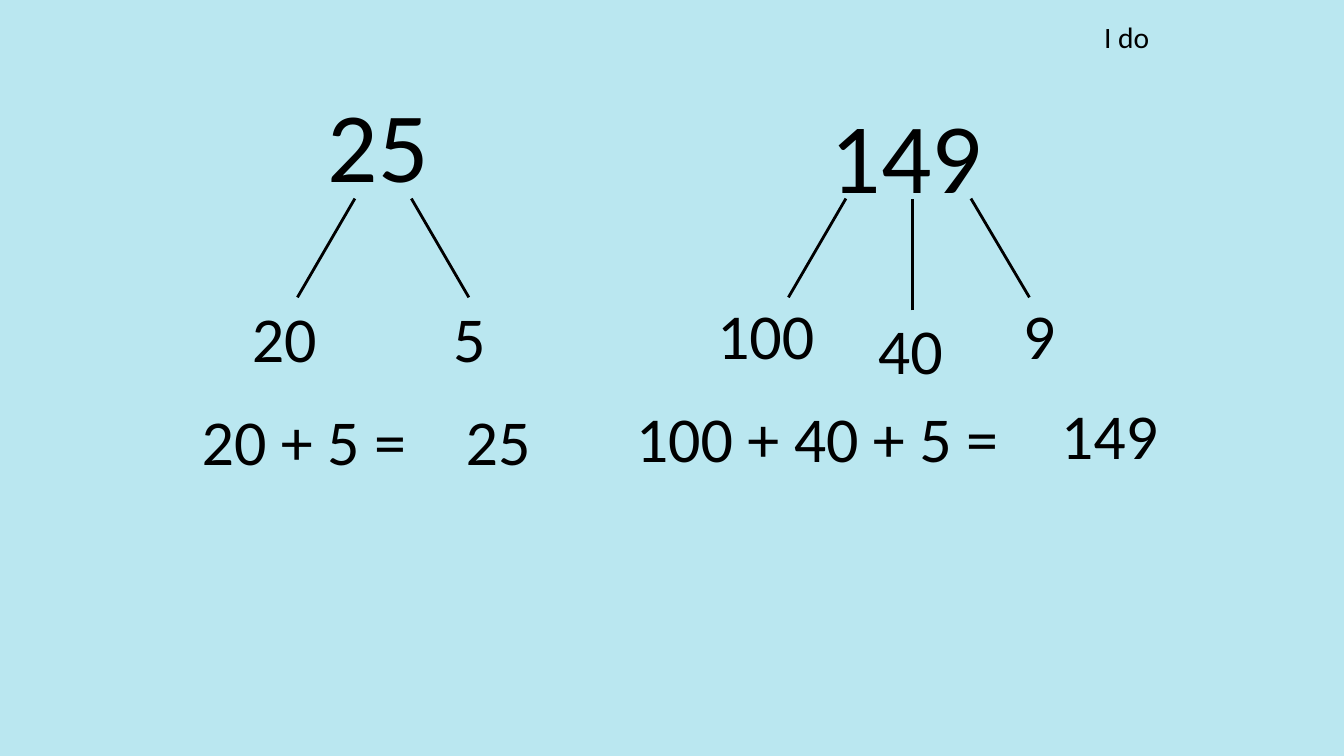
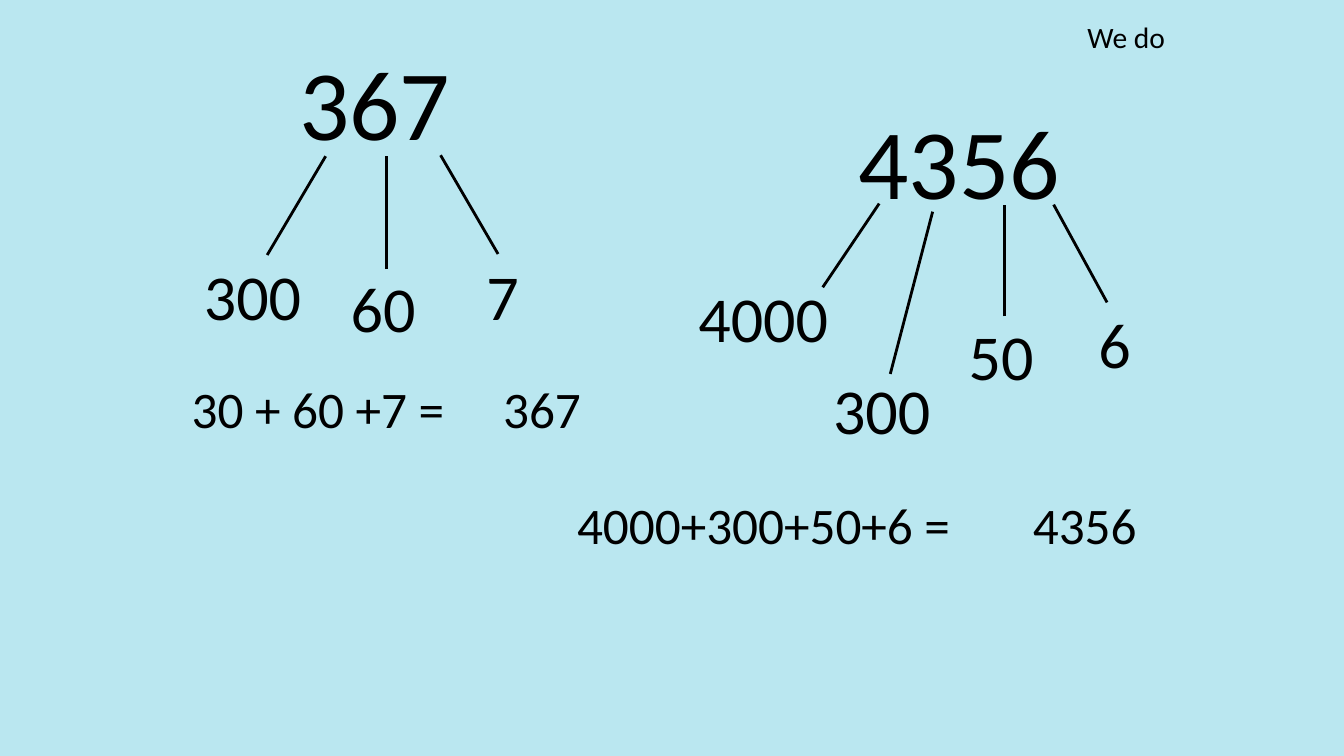
from lxml import etree
from pptx import Presentation
from pptx import util as u
from pptx.dml.color import RGBColor
from pptx.enum import shapes, text
from pptx.oxml.ns import qn


def rgb(code):
    return RGBColor.from_string(code)


class Deck:
    INK, SKY, FONT = "000000", "BAE7F0", "Calibri"
    WHOLE, PART, SUM, TAG = 71, 45.7, 36.6, 21.1
    HIGH = {WHOLE: 1.27, PART: 0.85, SUM: 0.69, TAG: 0.43}
    PAD = 0.04
    DIGIT = 0.52  # room for a digit in ems

    def __init__(self):
        self.prs = Presentation()
        self.prs.slide_width = u.Inches(13.33)
        self.prs.slide_height = u.Inches(7.5)
        fill = self.prs.slide_master.background.fill
        fill.solid()
        fill.fore_color.rgb = rgb(self.SKY)
        self.slide = None

    def page(self, tag, x, wide):
        """Start a slide with its lesson stage as a small title."""
        self.slide = self.prs.slides.add_slide(self.prs.slide_layouts[5])
        title = self.slide.shapes.title
        title.left, title.top = u.Inches(x), u.Inches(0.15)
        title.width, title.height = u.Inches(wide), u.Inches(self.HIGH[self.TAG])
        self.style(title, tag, self.TAG)

    def style(self, shape, words, size):
        frame = shape.text_frame
        frame.text = words
        frame.word_wrap = False
        frame.auto_size = text.MSO_AUTO_SIZE.NONE
        frame.vertical_anchor = text.MSO_ANCHOR.MIDDLE
        frame.margin_left = frame.margin_right = u.Inches(self.PAD)
        frame.margin_top = frame.margin_bottom = u.Inches(self.PAD)
        para = frame.paragraphs[0]
        para.alignment = text.PP_ALIGN.CENTER
        font = para.runs[0].font
        font.name, font.size = self.FONT, u.Pt(size)
        font.color.rgb = rgb(self.INK)

    def label(self, words, x, y, size, wide=None):
        """Place text; without a width, fit the box to its digits."""
        wide = wide or 2 * self.PAD + len(words) * self.DIGIT * size / 72
        box = self.slide.shapes.add_textbox(
            u.Inches(x), u.Inches(y), u.Inches(wide), u.Inches(self.HIGH[size]))
        self.style(box, words, size)

    def line(self, x1, y1, x2, y2):
        link = self.slide.shapes.add_connector(
            shapes.MSO_CONNECTOR.STRAIGHT,
            u.Inches(x1), u.Inches(y1), u.Inches(x2), u.Inches(y2))
        link.line.color.rgb = rgb(self.INK)
        link.line.width = u.Pt(2)
        etree.SubElement(link._element.spPr, qn("a:effectLst"))

    def tree(self, whole, x, y, parts):
        """Split a number; each part has its place and its branch."""
        self.label(whole, x, y, self.WHOLE)
        for part, left, top, branch in parts:
            self.line(*branch)
            self.label(part, left, top, self.PART)

    def total(self, terms, x, y, wide, answer, left, top, size):
        self.label(terms, x, y, size, wide)
        self.label(answer, left, top, size)


def main():
    deck = Deck()

    deck.page("I do", 10.91, 0.53)
    deck.tree("25", 3.2, 0.78, [
        ("20", 2.45, 2.92, (2.95, 2.95, 3.52, 1.97)),
        ("5", 4.45, 2.92, (4.65, 2.95, 4.08, 1.97)),
    ])
    deck.total("20 + 5 =", 1.95, 3.94, 2.13, "25", 4.57, 3.94, deck.PART)
    deck.tree("149", 8.18, 0.89, [
        ("100", 7.06, 2.89, (7.82, 2.95, 8.39, 1.97)),
        ("40", 8.66, 3.04, (9.05, 3.08, 9.05, 1.97)),
        ("9", 10.1, 2.89, (10.21, 2.95, 9.63, 1.97)),
    ])
    deck.total("100 + 40 + 5 =", 6.25, 3.91, 3.71, "149", 10.47, 3.88, deck.PART)

    deck.page("We do", 10.74, 0.86)
    deck.tree("367", 2.91, 0.36, [
        ("300", 1.97, 2.5, (2.65, 2.53, 3.23, 1.55)),
        ("60", 3.43, 2.62, (3.83, 2.67, 3.83, 1.55)),
        ("7", 4.78, 2.5, (4.94, 2.52, 4.37, 1.54)),
    ])
    deck.total("30 + 60 +7 =", 1.85, 3.7, 2.61, "367", 4.94, 3.7, deck.SUM)
    deck.tree("4356", 8.45, 0.95, [
        ("4000", 6.87, 2.72, (8.16, 2.85, 8.72, 2.02)),
        ("300", 8.21, 3.63, (8.83, 3.71, 9.25, 2.1)),
        ("50", 9.56, 3.1, (9.96, 3.14, 9.96, 2.03)),
        ("6", 10.85, 2.98, (10.98, 3, 10.45, 2.03)),
    ])
    deck.total("4000+300+50+6 =", 5.67, 4.85, 3.81, "4356", 10.19, 4.85, deck.SUM)

    deck.prs.save("out.pptx")


if __name__ == "__main__":
    main()
